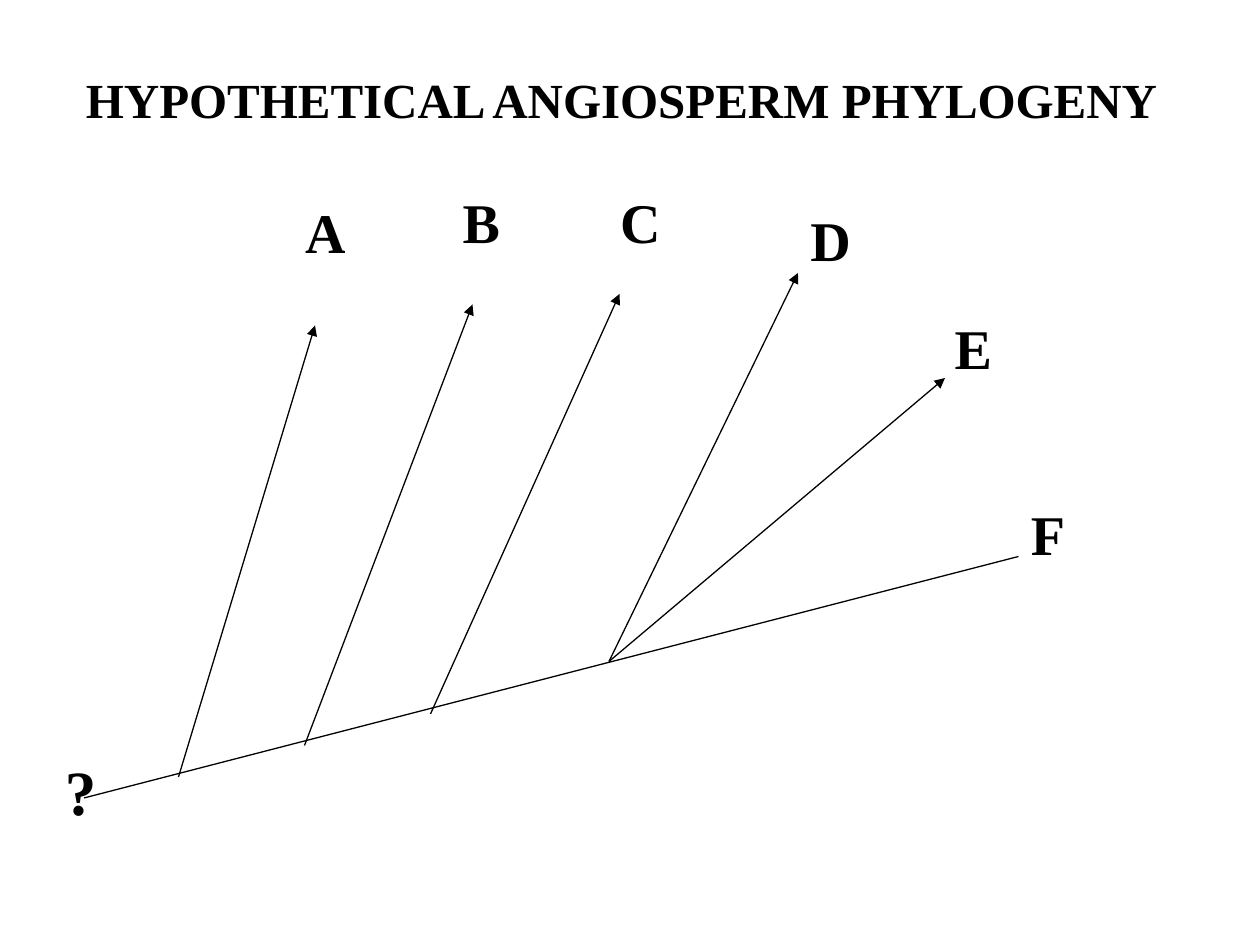
from lxml.etree import SubElement
from pptx import Presentation
from pptx.dml.color import RGBColor
from pptx.enum.shapes import MSO_CONNECTOR as Connector
from pptx.enum.text import MSO_AUTO_SIZE as AutoSize, PP_ALIGN as Align
from pptx.oxml.ns import qn
from pptx.util import Pt

EMU_PER_PX = 9525
BLACK = RGBColor(0, 0, 0)
LABEL_HEIGHT = 60
FORK = (464, 504)

BRANCHES = [
    (FORK, (608, 208)),
    (FORK, (720, 288)),
    ((328, 544), (472, 224)),
    ((232, 568), (360, 232)),
    ((136, 592), (240, 248)),
]
STEM = ((64, 608), (776, 424))
TAXA = [
    ("A", 223, 146, 50),
    ("B", 343, 138, 48),
    ("C", 463, 138, 50),
    ("D", 608, 152, 50),
    ("E", 718, 234, 48),
    ("F", 776, 376, 45),
]


def px(value):
    """Turn pixels into EMU."""
    return value * EMU_PER_PX


class PhylogenySlide:
    """Hold the style and the current slide, and draw its elements."""

    font_format = {"name": "Times New Roman", "bold": True}
    frame_format = {"word_wrap": False, "auto_size": AutoSize.SHAPE_TO_FIT_TEXT}

    def __init__(self, slide):
        """Keep the slide to draw on."""
        self.slide = slide

    def line(self, start, end, arrow=False):
        """Draw a straight line, with an arrowhead at its end if asked."""
        points = [px(value) for value in (*start, *end)]
        connector = self.slide.shapes.add_connector(Connector.STRAIGHT, *points)
        connector.line.width = Pt(0.75)
        connector.line.color.rgb = BLACK
        if arrow:
            outline = connector.line._get_or_add_ln()
            SubElement(outline, qn("a:tailEnd"), type="triangle")
        SubElement(connector._element.spPr, qn("a:effectLst"))

    def text(self, words, left, top, width, height, size):
        """Write one bold line of text."""
        bounds = [px(value) for value in (left, top, width, height)]
        frame = self.slide.shapes.add_textbox(*bounds).text_frame
        for name, value in self.frame_format.items():
            setattr(frame, name, value)
        paragraph = frame.paragraphs[0]
        paragraph.alignment = Align.LEFT
        run = paragraph.add_run()
        run.text = words
        for name, value in {**self.font_format, "size": Pt(size)}.items():
            setattr(run.font, name, value)
        run.font.color.rgb = BLACK


def main():
    """Build the phylogeny slide and save it."""
    presentation = Presentation()
    presentation.slide_width, presentation.slide_height = px(960), px(720)
    blank_layout = presentation.slide_layouts[6]
    phylogeny = PhylogenySlide(presentation.slides.add_slide(blank_layout))

    for start, end in BRANCHES:
        phylogeny.line(start, end, arrow=True)
    phylogeny.line(*STEM)
    for name, left, top, width in TAXA:
        phylogeny.text(name, left, top, width, LABEL_HEIGHT, 32)
    phylogeny.text("?", 40, 569, 43, 67, 36)
    phylogeny.text("HYPOTHETICAL ANGIOSPERM PHYLOGENY", 56, 48, 840, 55, 28)

    presentation.save("out.pptx")


if __name__ == "__main__":
    main()
